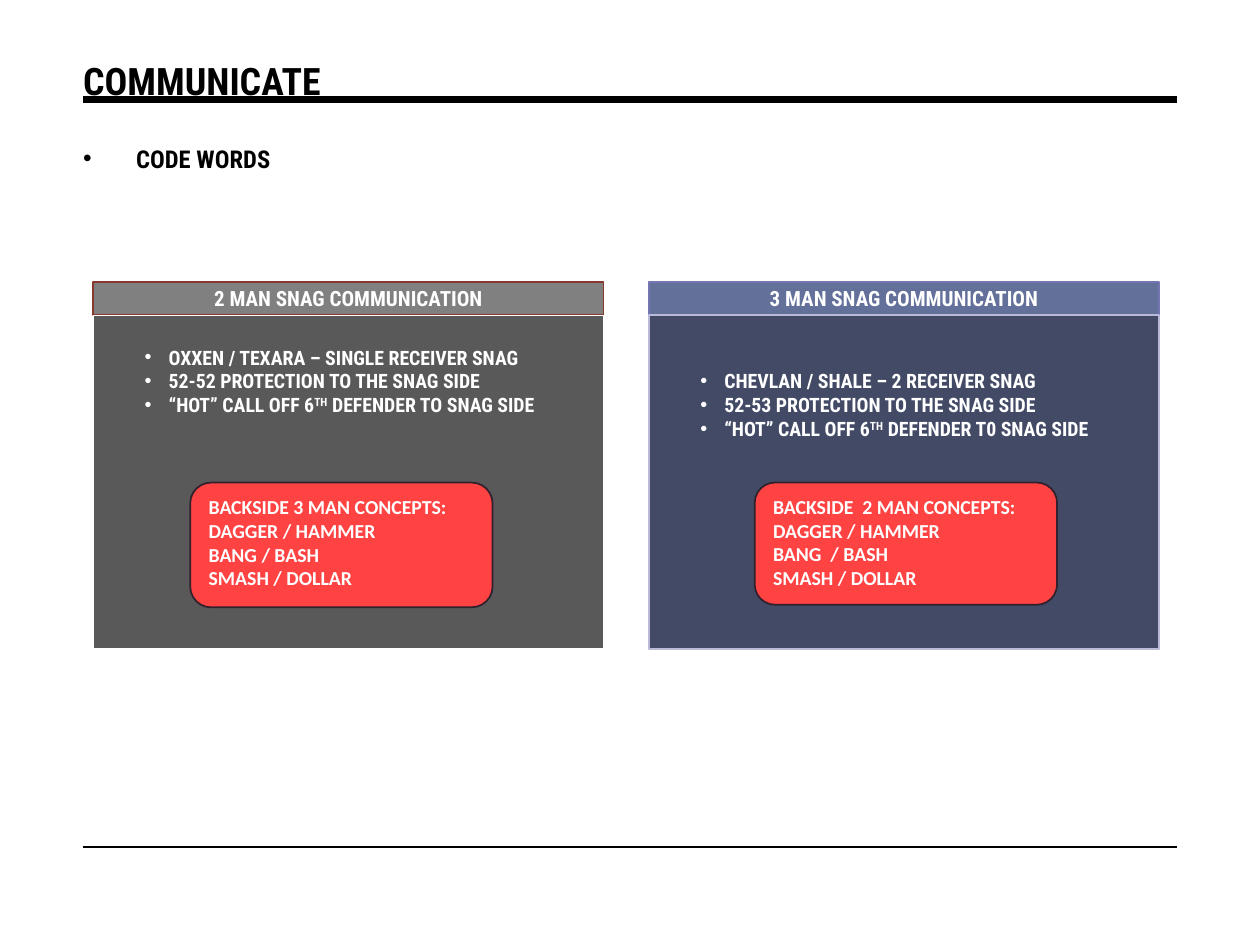
from lxml import etree
from pptx import Presentation
from pptx.dml.color import RGBColor
from pptx.enum import shapes, text
from pptx.oxml.ns import qn
from pptx.util import Inches, Pt

HEAD_FONT = "Roboto Condensed"
LEFT, CENTER = text.PP_ALIGN.LEFT, text.PP_ALIGN.CENTER
TOP, MIDDLE, BOTTOM = (text.MSO_ANCHOR.TOP, text.MSO_ANCHOR.MIDDLE,
                       text.MSO_ANCHOR.BOTTOM)


def rgb(value):
    return RGBColor.from_string(value)


def write(sp, lines, size, color="FFFFFF", font=HEAD_FONT, align=LEFT,
          anchor=TOP, bullet=None, wrap=True, **margins):
    """Fill a shape with bold lines; ^ switches superscript on and off,
    bullet is (left indent, hanging indent) in inches."""
    tf = sp.text_frame
    frame = {"auto_size": text.MSO_AUTO_SIZE.NONE, "word_wrap": wrap,
             "vertical_anchor": anchor}
    frame.update({f"margin_{side}": Inches(v) for side, v in margins.items()})
    for name, value in frame.items():
        setattr(tf, name, value)
    for i, line in enumerate(lines):
        p = tf.paragraphs[0] if i == 0 else tf.add_paragraph()
        for name, value in {"alignment": align, "line_spacing": 1.0,
                            "space_before": Pt(0)}.items():
            setattr(p, name, value)
        if bullet:
            pPr = p._p.get_or_add_pPr()
            pPr.set("marL", str(Inches(bullet[0])))
            pPr.set("indent", str(Inches(-bullet[1])))
            etree.SubElement(pPr, qn("a:buFont")).set("typeface", "Arial")
            etree.SubElement(pPr, qn("a:buChar")).set("char", "•")
        for j, part in enumerate(line.split("^")):
            r = p.add_run()
            r.text = part
            for name, value in {"name": font, "size": Pt(size), "bold": True}.items():
                setattr(r.font, name, value)
            r.font.color.rgb = rgb(color)
            if j % 2:
                r.font._element.set("baseline", "30000")


prs = Presentation()
prs.slide_width, prs.slide_height = Inches(10), Inches(7.5)
slide = prs.slides.add_slide(prs.slide_layouts[1])

# Rules under the title and above the footer
for y, weight in [(0.79, 3.5), (6.72, 1)]:
    rule = slide.shapes.add_connector(
        shapes.MSO_CONNECTOR.STRAIGHT, Inches(0.66), Inches(y), Inches(9.34), Inches(y))
    rule.line.color.rgb = rgb("000000")
    rule.line.width = Pt(weight)
    etree.SubElement(rule._element.spPr, qn("a:effectLst"))

# Title and code words
title, body = slide.shapes.title, slide.placeholders[1]
for sp, box in [(title, (0.56, 0.22, 8.19, 0.67)), (body, (0.56, 0.68, 1.74, 0.98))]:
    sp.left, sp.top, sp.width, sp.height = map(Inches, box)
write(title, ["COMMUNICATE"], 21.6, "000000", anchor=BOTTOM, bottom=0.07)
write(body, ["CODE WORDS"], 14, "000000", bullet=(0.42, 0.42), wrap=False, top=0.46)

# Two panels: header bar, body with bullets, rounded callout
panels = [
    {"x": 0.74, "header": "2 MAN SNAG COMMUNICATION",
     "header_colors": ("808080", "89392C", 1), "body_colors": ("595959", "FFFFFF", 0.5),
     "bullets": ["OXXEN / TEXARA – SINGLE RECEIVER SNAG",
                 "52-52 PROTECTION TO THE SNAG SIDE",
                 "“HOT” CALL OFF 6^TH^ DEFENDER TO SNAG SIDE"],
     "bullet_top": 0.24, "callout_x": 1.51, "callout_h": 0.99,
     "concepts": ["BACKSIDE 3 MAN CONCEPTS:", "DAGGER / HAMMER",
                  "BANG / BASH", "SMASH / DOLLAR"]},
    {"x": 5.15, "header": "3 MAN SNAG COMMUNICATION",
     "header_colors": ("62709A", "7575B1", 1), "body_colors": ("424A66", "BABAD8", 1),
     "bullets": ["CHEVLAN / SHALE – 2 RECEIVER SNAG",
                 "52-53 PROTECTION TO THE SNAG SIDE",
                 "“HOT” CALL OFF 6^TH^ DEFENDER T0 SNAG SIDE"],
     "bullet_top": 0.43, "callout_x": 5.99, "callout_h": 0.97,
     "concepts": ["BACKSIDE  2 MAN CONCEPTS:", "DAGGER / HAMMER",
                  "BANG  / BASH", "SMASH / DOLLAR"]},
]
RECT, ROUNDED = shapes.MSO_SHAPE.RECTANGLE, shapes.MSO_SHAPE.ROUNDED_RECTANGLE
for panel in panels:
    x = panel["x"]
    parts = [
        (RECT, (x, 2.24, 4.05, 0.26), panel["header_colors"], [panel["header"]],
         {"size": 12, "align": CENTER, "anchor": MIDDLE}),
        (RECT, (x, 2.5, 4.05, 2.65), panel["body_colors"], panel["bullets"],
         {"size": 11.3, "bullet": (0.5, 0.19), "top": panel["bullet_top"]}),
        (ROUNDED, (panel["callout_x"], 3.83, 2.4, panel["callout_h"]),
         ("FF4343", "32212D", 1), panel["concepts"], {"size": 11.3, "font": "Calibri"}),
    ]
    for kind, box, (fill, line, weight), lines, style in parts:
        sp = slide.shapes.add_shape(kind, *map(Inches, box))
        sp.shadow.inherit = False
        sp.fill.solid()
        sp.fill.fore_color.rgb = rgb(fill)
        sp.line.color.rgb = rgb(line)
        sp.line.width = Pt(weight)
        write(sp, lines, **style)

prs.save("out.pptx")
